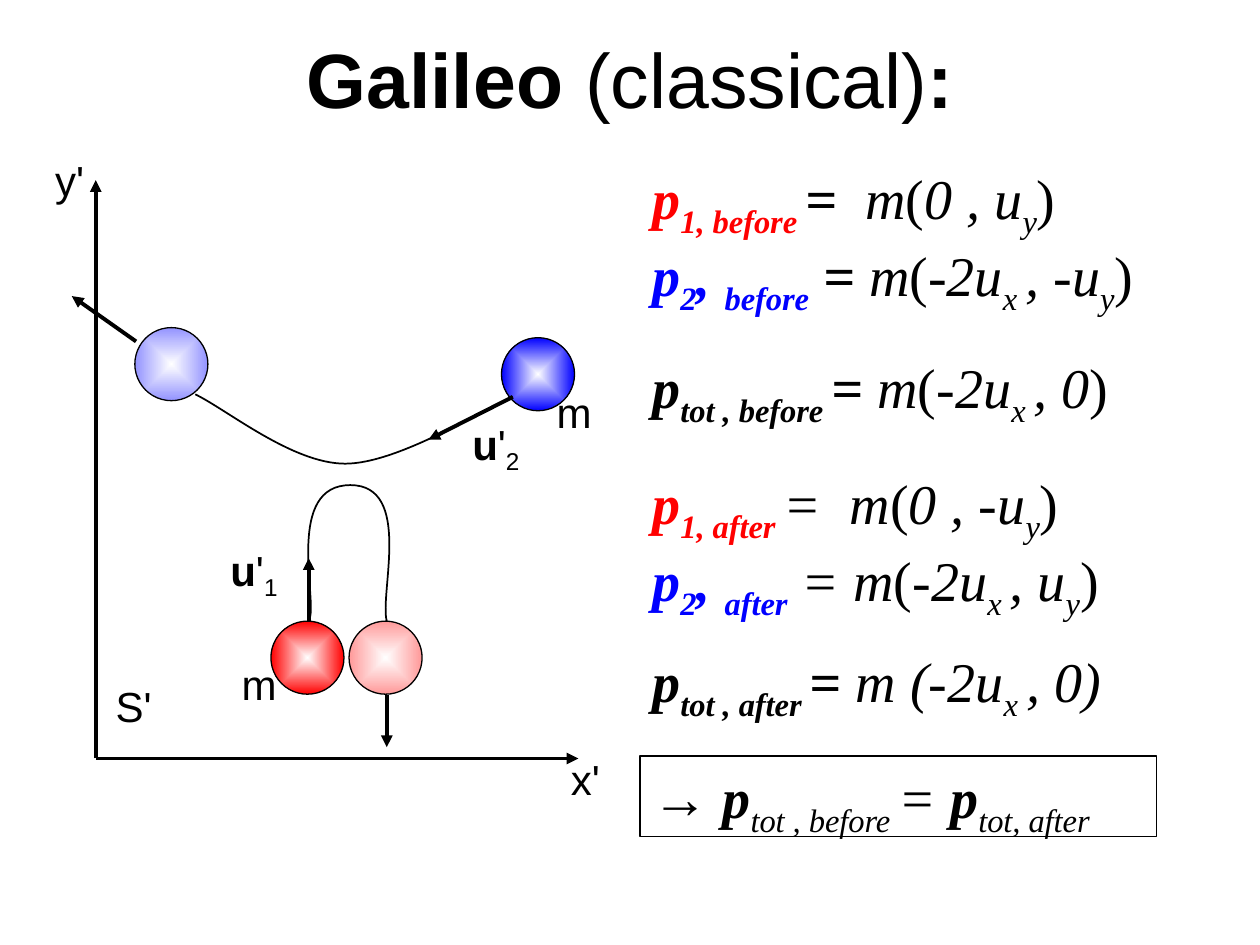
from dataclasses import dataclass

from lxml import etree
from pptx import Presentation, util as u
from pptx.dml.color import RGBColor
from pptx.enum import shapes, text
from pptx.oxml.ns import qn

Inches = u.Inches


@dataclass(frozen=True)
class Theme:
    ink: str = "000000"
    white: str = "FFFFFF"
    red: str = "FF0000"
    pale_red: str = "FF9999"
    blue: str = "0000FF"
    pale_blue: str = "9393FF"
    sans: str = "Arial"
    serif: str = "Times New Roman"
    title_size: int = 44
    formula_size: int = 32
    label_size: int = 24
    outline: float = 0.75
    trail: float = 1
    arrow: float = 2.25


THEME = Theme()
BALL = 0.58
FORMULA_LEFT = 5.08


def rgb(colour):
    return RGBColor.from_string(colour)


# Rich text: each run is (text, style), where the style letters mean
# b bold, i italic, s subscript, R red, B blue
def write_line(paragraph, runs, font, size):
    for words, style in runs:
        run = paragraph.add_run()
        run.text = words
        run.font.name, run.font.size = font, u.Pt(size)
        run.font.bold, run.font.italic = "b" in style, "i" in style
        colour = THEME.red if "R" in style else THEME.blue if "B" in style else THEME.ink
        run.font.color.rgb = rgb(colour)
        if "s" in style:
            run.font._element.set("baseline", "-25000")


def write_box(slide, place, lines, font, size):
    box = slide.shapes.add_textbox(*map(Inches, place))
    frame = box.text_frame
    frame.word_wrap = False
    frame.auto_size = text.MSO_AUTO_SIZE.SHAPE_TO_FIT_TEXT
    for number, runs in enumerate(lines):
        paragraph = frame.add_paragraph() if number else frame.paragraphs[0]
        write_line(paragraph, runs, font, size)
    return box


def add_title(slide, runs):
    title = slide.shapes.add_textbox(Inches(0.5), Inches(-0.01), Inches(9), Inches(1.25))
    frame = title.text_frame
    frame.word_wrap = True
    frame.vertical_anchor = text.MSO_ANCHOR.MIDDLE
    frame.paragraphs[0].alignment = text.PP_ALIGN.CENTER
    write_line(frame.paragraphs[0], runs, THEME.sans, THEME.title_size)


def add_formula(slide, top, width, *lines):
    height = 0.64 if len(lines) == 1 else 1.18
    return write_box(slide, (FORMULA_LEFT, top, width, height), lines,
                     THEME.serif, THEME.formula_size)


def add_label(slide, left, top, width, *runs):
    write_box(slide, (left, top, width, 0.57), [runs], THEME.sans, THEME.label_size)


def set_line(shape, width):
    shape.line.color.rgb = rgb(THEME.ink)
    shape.line.width = u.Pt(width)


def add_ball(slide, left, top, colour):
    ball = slide.shapes.add_shape(shapes.MSO_SHAPE.OVAL, Inches(left), Inches(top),
                                  Inches(BALL), Inches(BALL))
    ball.shadow.inherit = False
    set_line(ball, THEME.outline)
    ball.fill.gradient()
    for stop, place, shade in zip(ball.fill.gradient_stops, (0, 1), (THEME.white, colour)):
        stop.position = place
        stop.color.rgb = rgb(shade)
    # Spread the gradient outwards from the centre
    gradient = ball._element.spPr.find(qn("a:gradFill"))
    gradient.remove(gradient.find(qn("a:lin")))
    spread = etree.SubElement(gradient, qn("a:path"), path="shape")
    etree.SubElement(spread, qn("a:fillToRect"), l="50000", t="50000", r="50000", b="50000")


def add_arrow(slide, start, end):
    arrow = slide.shapes.add_connector(shapes.MSO_CONNECTOR.STRAIGHT,
                                       *map(Inches, (*start, *end)))
    set_line(arrow, THEME.arrow)
    etree.SubElement(arrow.line._get_or_add_ln(), qn("a:tailEnd"), type="triangle")
    etree.SubElement(arrow._element.spPr, qn("a:effectLst"))


def add_trail(slide, start, *points):
    """Bezier curve: two control points and an end point for each stretch."""
    builder = slide.shapes.build_freeform(*map(Inches, start), scale=1.0)
    builder.add_line_segments([tuple(map(Inches, point)) for point in points], close=False)
    trail = builder.convert_to_shape()
    trail.shadow.inherit = False
    trail.fill.background()
    set_line(trail, THEME.trail)
    segments = list(trail._element.iter(qn("a:lnTo")))
    outline = segments[0].getparent()
    for first in range(0, len(segments), 3):
        curve = etree.SubElement(outline, qn("a:cubicBezTo"))
        for segment in segments[first:first + 3]:
            curve.append(segment[0])
            outline.remove(segment)


def add_formulas(slide):
    u_y = [("y", "is"), (")", "")]
    two_u_x = [("(", ""), ("-2u", "i"), ("x ", "is")]

    # Momenta before the collision
    add_formula(
        slide, 1.25, 4.28,
        [("p", "biR"), ("1, before ", "bisR"), ("=  ", "bi"), ("m", "i"), ("(", ""),
         ("0 , u", "i"), *u_y],
        [("p", "biB"), ("2", "bisB"), (", ", "biB"), ("before", "bisB"), (" = ", "bi"),
         ("m", "i"), *two_u_x, (", -u", "i"), *u_y])
    add_formula(
        slide, 2.75, 4.21,
        [("p", "bi"), ("tot , before ", "bis"), ("= ", "bi"), ("m", "i"), *two_u_x,
         (", 0", "i"), (")", "")])

    # Momenta after the collision
    add_formula(
        slide, 3.67, 4.1,
        [("p", "biR"), ("1, after ", "bisR"), ("=  m", "i"), ("(", ""), ("0 , -u", "i"), *u_y],
        [("p", "biB"), ("2", "bisB"), (", ", "biB"), ("after", "bisB"), (" = m", "i"),
         *two_u_x, (", u", "i"), *u_y])
    add_formula(
        slide, 5.08, 4.16,
        [("p", "bi"), ("tot , after ", "bis"), ("= ", "bi"), ("m (-2u", "i"), ("x ", "is"),
         (", 0)", "i")])

    # Framed conclusion
    conclusion = add_formula(
        slide, 6, 4.1,
        [("→ ", ""), ("p", "bi"), ("tot , before ", "is"), ("= ", "i"), ("p", "bi"),
         ("tot, after", "is")])
    set_line(conclusion, THEME.outline)


def add_collision(slide):
    # Ball 1 comes up from below and returns
    add_ball(slide, 2.15, 4.93, THEME.red)
    add_arrow(slide, (2.45, 4.93), (2.45, 4.43))
    add_trail(slide, (2.46, 4.9), (2.51, 4.73), (2.27, 3.85), (2.78, 3.85),
              (3.28, 3.85), (3.01, 4.71), (3.07, 4.93))
    add_ball(slide, 2.77, 4.93, THEME.pale_red)
    add_arrow(slide, (3.07, 5.52), (3.07, 5.93))

    # Ball 2 passes from right to left
    add_ball(slide, 3.98, 2.68, THEME.blue)
    add_arrow(slide, (4.07, 3.15), (3.4, 3.49))
    add_trail(slide, (4.07, 3.15), (3.85, 3.24), (3.16, 3.68), (2.74, 3.68),
              (2.32, 3.68), (1.8, 3.25), (1.55, 3.13))
    add_ball(slide, 1.07, 2.6, THEME.pale_blue)
    add_arrow(slide, (1.08, 2.71), (0.57, 2.35))

    # Axes of the moving frame
    origin = (0.76, 6.02)
    add_arrow(slide, origin, (4.59, 6.02))
    add_arrow(slide, origin, (0.76, 1.43))

    # Labels
    add_label(slide, 0.34, 1.18, 0.47, ("y'", ""))
    add_label(slide, 4.34, 5.93, 0.58, (" x'", ""))
    for left, top, index in ((1.73, 4.27, "1"), (3.65, 3.27, "2")):
        add_label(slide, left, top, 0.66, ("u", "b"), ("'", ""), (index, "s"))
    for left, top in ((1.82, 5.18), (4.32, 3.02)):
        add_label(slide, left, top, 0.53, ("m", ""))
    add_label(slide, 0.82, 5.35, 0.53, ("S'", ""))


def main():
    deck = Presentation()
    deck.slide_width, deck.slide_height = Inches(10), Inches(7.5)
    slide = deck.slides.add_slide(deck.slide_layouts[6])
    add_title(slide, [("Galileo ", "b"), ("(classical)", ""), (":", "b")])
    add_formulas(slide)
    add_collision(slide)
    deck.save("out.pptx")


if __name__ == "__main__":
    main()
